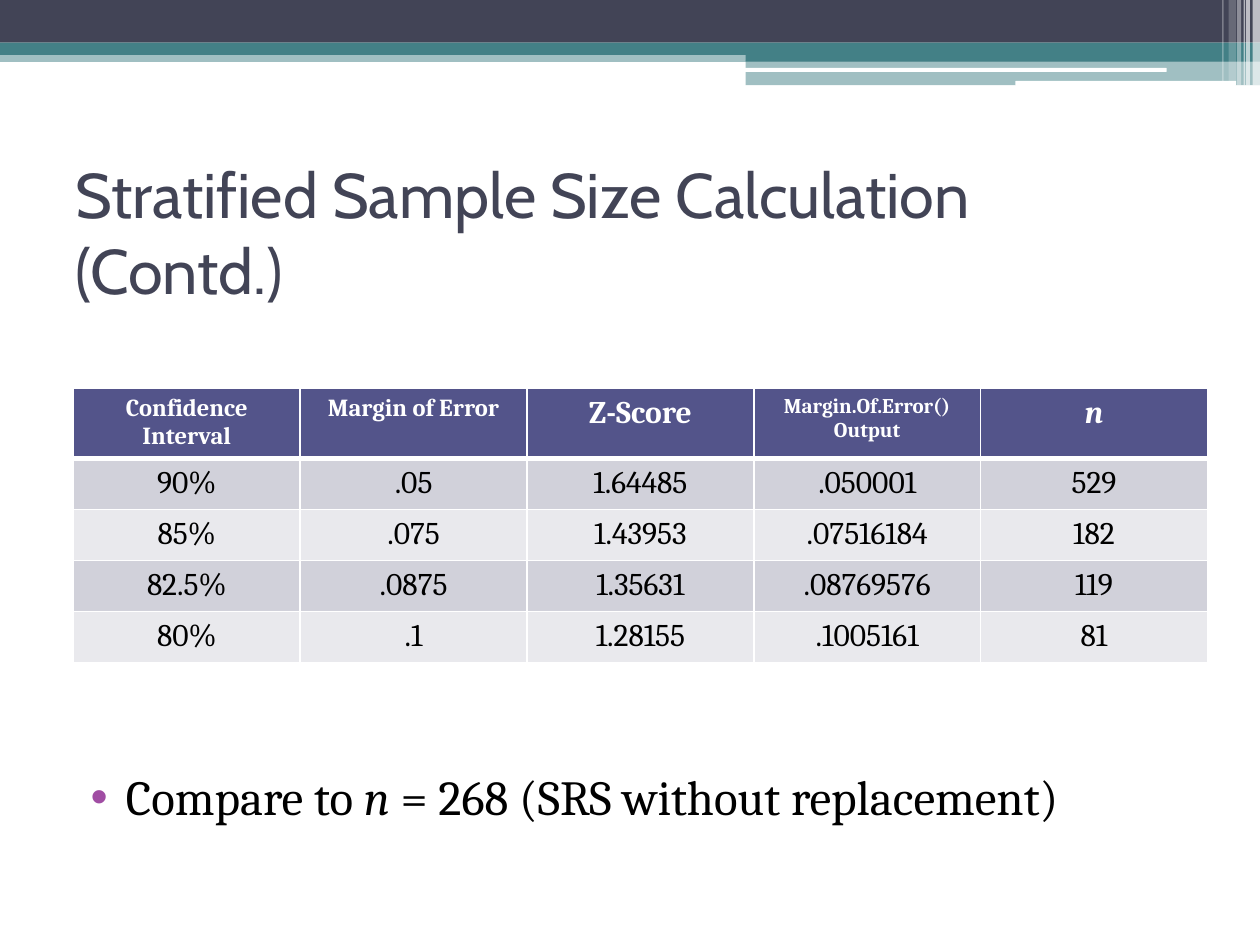
from pptx import Presentation
from pptx.dml.color import RGBColor
from pptx.enum.shapes import MSO_SHAPE as Shape
from pptx.enum.text import MSO_ANCHOR as Anchor, PP_ALIGN as Align
from pptx.oxml import parse_xml
from pptx.oxml.ns import nsdecls
from pptx.util import Cm, Pt

NAVY, TEAL, WHITE, BLACK = "424456", "438086", "FFFFFF", "000000"
HEADER, BANDS, BULLET = "53548A", ("D1D1DA", "E9E9ED"), "A04DA3"


def color(value):
    return RGBColor.from_string(value)


class SlideBuilder:
    heading_font = "Cabin"
    body_font = "Cambria"

    def __init__(self, slide):
        self.slide = slide

    def style(self, font, size, fill, name=body_font, bold=False):
        font.name, font.size, font.bold = name, Pt(size), bold
        font.color.rgb = color(fill)

    def bar(self, left, top, width, height, fill, opacity=100, kind=Shape.RECTANGLE):
        shape = self.slide.shapes.add_shape(kind, Cm(left), Cm(top), Cm(width), Cm(height))
        shape.shadow.inherit = False
        shape.line.fill.background()
        shape.fill.solid()
        shape.fill.fore_color.rgb = color(fill)
        if opacity < 100:
            tint = shape._element.spPr.find(".//{*}srgbClr")
            tint.append(parse_xml(f'<a:alpha {nsdecls("a")} val="{opacity * 1000}"/>'))

    def title(self, text, left, top, width, height):
        title = self.slide.shapes.title
        title.left, title.top, title.width, title.height = map(Cm, (left, top, width, height))
        frame = title.text_frame
        frame.text = text
        frame.vertical_anchor = Anchor.MIDDLE
        paragraph = frame.paragraphs[0]
        paragraph.alignment = Align.LEFT
        self.style(paragraph.font, 36, NAVY, self.heading_font)

    def cell(self, cell, text, size, fill, text_color, bold=False, bottom=1):
        properties = cell._tc.get_or_add_tcPr()
        for side, width in (("lnL", 1), ("lnR", 1), ("lnT", 1), ("lnB", bottom)):
            properties.append(parse_xml(
                f'<a:{side} {nsdecls("a")} w="{Pt(width)}"><a:solidFill>'
                f'<a:srgbClr val="{WHITE}"/></a:solidFill></a:{side}>'))
        cell.fill.solid()
        cell.fill.fore_color.rgb = color(fill)
        cell.text = text
        paragraph = cell.text_frame.paragraphs[0]
        paragraph.alignment = Align.CENTER
        self.style(paragraph.font, size, text_color, bold=bold)

    def table(self, header, rows, left, top, width, header_height, row_height):
        height = header_height + row_height * len(rows)
        table = self.slide.shapes.add_table(
            len(rows) + 1, len(header), Cm(left), Cm(top), Cm(width), Cm(height)).table
        for column in table.columns:
            column.width = Cm(width / len(header))
        for index, row in enumerate(table.rows):
            row.height = Cm(row_height if index else header_height)
        for column, (text, size) in enumerate(header):
            self.cell(table.cell(0, column), text, size, HEADER, WHITE, bold=True, bottom=3)
        for index, values in enumerate(rows):
            for column, text in enumerate(values):
                self.cell(table.cell(index + 1, column), text, 18, BANDS[index % 2], BLACK)
        return table

    def bullet(self, parts, left, top, width, height):
        box = self.slide.shapes.add_textbox(Cm(left), Cm(top), Cm(width), Cm(height))
        frame = box.text_frame
        frame.word_wrap = True
        frame.vertical_anchor = Anchor.MIDDLE
        paragraph = frame.paragraphs[0]
        self.style(paragraph.font, 28, BLACK)
        for text, italic in parts:
            run = paragraph.add_run()
            run.text = text
            run.font.italic = italic
        properties = paragraph._p.get_or_add_pPr()
        properties.set("marL", str(Cm(1.02)))
        properties.set("indent", str(Cm(-0.71)))
        marks = (f'<a:buClr {nsdecls("a")}><a:srgbClr val="{BULLET}"/></a:buClr>',
                 f'<a:buFont {nsdecls("a")} typeface="Arial"/>',
                 f'<a:buChar {nsdecls("a")} char="•"/>')
        for position, mark in enumerate(marks):
            properties.insert(position, parse_xml(mark))


def main():
    presentation = Presentation()
    presentation.slide_width, presentation.slide_height = Cm(25.4), Cm(19.05)
    builder = SlideBuilder(presentation.slides.add_slide(presentation.slide_layouts[5]))

    # Banner across the top
    builder.bar(0, 1.02, 25.4, 0.23, TEAL, 50)
    builder.bar(0, 0, 25.4, 0.86, NAVY)
    builder.bar(0, 0.86, 25.4, 0.25, TEAL)
    builder.bar(15.03, 0.99, 10.37, 0.25, TEAL)
    builder.bar(15.03, 1.22, 10.37, 0.5, TEAL, 50)
    builder.bar(15.01, 1.37, 8.51, 0.08, WHITE, kind=Shape.ROUNDED_RECTANGLE)
    builder.bar(20.47, 1.63, 4.45, 0.1, WHITE, kind=Shape.ROUNDED_RECTANGLE)

    # Pale stripes at the right end of the banner
    for left, width, height, opacity in (
            (25.25, 0.15, 1.73, 65), (25.12, 0.08, 1.73, 65), (25.07, 0.03, 1.73, 60),
            (24.94, 0.08, 1.73, 40), (24.77, 0.15, 1.63, 20), (24.64, 0.03, 1.63, 30)):
        builder.bar(left, 0, width, height, WHITE, opacity)

    builder.title("Stratified Sample Size Calculation (Contd.)", 1.27, 3.18, 22.86, 2.97)

    # Sample sizes by confidence interval
    header = (("Confidence Interval", 14), ("Margin of Error", 14), ("Z-Score", 18),
              ("Margin.Of.Error() Output", 12), ("n", 18))
    rows = (("90%", ".05", "1.64485", ".050001", "529"),
            ("85%", ".075", "1.43953", ".07516184", "182"),
            ("82.5%", ".0875", "1.35631", ".08769576", "119"),
            ("80%", ".1", "1.28155", ".1005161", "81"))
    table = builder.table(header, rows, 1.48, 7.83, 22.86, 1.41, 1.03)
    table.cell(0, len(header) - 1).text_frame.paragraphs[0].font.italic = True

    # Comparison below the table
    builder.bullet((("Compare to ", False), ("n", True),
                    (" = 268 (SRS without replacement)", False)), 1.27, 15.3, 22.86, 1.5)

    presentation.save("out.pptx")


if __name__ == "__main__":
    main()
